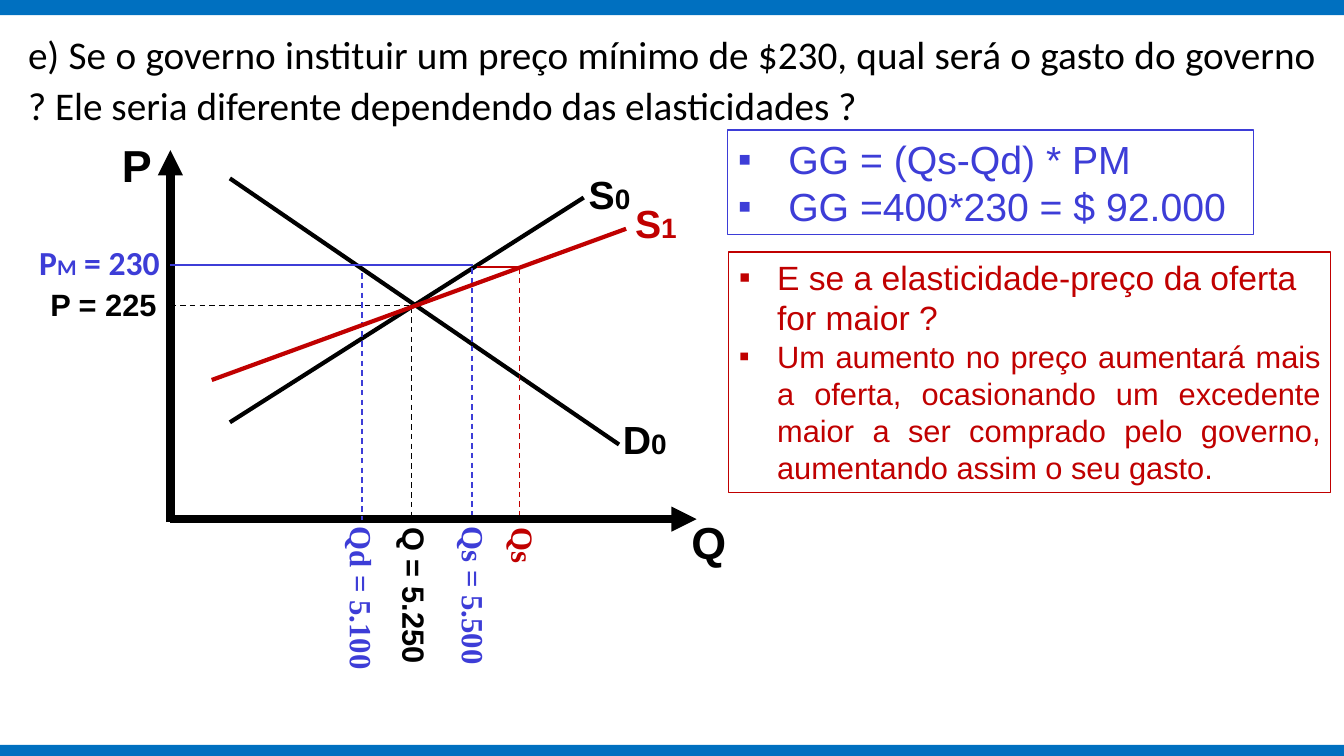
from lxml import etree
from pptx import Presentation
from pptx import util as u
from pptx.dml.color import RGBColor
from pptx.enum import dml, shapes, text
from pptx.oxml import ns

BLACK = RGBColor(0x00, 0x00, 0x00)
BAND = RGBColor(0x00, 0x70, 0xC0)
BLUE = RGBColor(0x3D, 0x3D, 0xD7)
RED = RGBColor(0xC0, 0x00, 0x00)
JUSTIFY = text.PP_ALIGN.JUSTIFY


class MarketSlide:
    """Holds the fonts and the slide, and draws each kind of element."""

    sans, body, serif = "Arial", "Calibri", "Times New Roman"

    def __init__(self, prs):
        self.s = prs.slides.add_slide(prs.slide_layouts[6])

    def band(self, top, height):
        sp = self.s.shapes.add_shape(shapes.MSO_SHAPE.RECTANGLE, 0, u.Inches(top),
                                     u.Inches(13.33), u.Inches(height))
        sp.shadow.inherit = False
        sp.fill.solid()
        sp.fill.fore_color.rgb = BAND
        sp.line.fill.background()

    def line(self, start, end, color=BLACK, width=3, dashed=False, arrow=False):
        ends = [u.Inches(v) for v in (*start, *end)]
        sp = self.s.shapes.add_connector(shapes.MSO_CONNECTOR.STRAIGHT, *ends)
        sp.line.color.rgb = color
        sp.line.width = u.Pt(width)
        if dashed:
            sp.line.dash_style = dml.MSO_LINE.DASH
        if arrow:
            ln = sp.line._get_or_add_ln()
            etree.SubElement(ln, ns.qn("a:tailEnd"), type="triangle")
        etree.SubElement(sp._element.spPr, ns.qn("a:effectLst"))

    def frame(self, left, top, width, height, border=None):
        sp = self.s.shapes.add_textbox(*[u.Inches(v) for v in (left, top, width, height)])
        sp.text_frame.word_wrap = True
        if border is not None:
            sp.line.color.rgb = border
            sp.line.width = u.Pt(0.75)
        return sp

    def format(self, r, size, font, color, bold=False):
        r.font.size = u.Pt(size)
        r.font.name = font
        r.font.color.rgb = color
        r.font.bold = bold

    def label(self, box, parts, color=BLACK, font=sans, rotation=0):
        sp = self.frame(*box)
        sp.rotation = rotation
        p = sp.text_frame.paragraphs[0]
        for words, size in parts:
            r = p.add_run()
            r.text = words
            self.format(r, size, font, color, True)

    def question(self, box, words):
        p = self.frame(*box).text_frame.paragraphs[0]
        p.text = words
        p.alignment = JUSTIFY
        p.line_spacing = 1.07
        p.space_after = u.Pt(8)
        self.format(p.runs[0], 28, self.body, BLACK)

    def bullets(self, box, color, indent, items):
        tf = self.frame(*box, border=color).text_frame
        for i, (words, size, align) in enumerate(items):
            p = tf.add_paragraph() if i else tf.paragraphs[0]
            p.text = words
            p.alignment = align
            pPr = p._p.get_or_add_pPr()
            pPr.set("marL", str(u.Inches(indent)))
            pPr.set("indent", str(-u.Inches(indent)))
            etree.SubElement(pPr, ns.qn("a:buFont"), typeface=self.sans)
            etree.SubElement(pPr, ns.qn("a:buChar"), char="▪")
            self.format(p.runs[0], size, self.sans, color)


def main():
    prs = Presentation()
    prs.slide_width, prs.slide_height = u.Inches(13.33), u.Inches(7.5)
    m = MarketSlide(prs)
    m.band(-0.03, 0.18)
    m.band(7.39, 0.13)
    m.question((0.18, 0.22, 12.97, 1.09),
               "e) Se o governo instituir um preço mínimo de $230, qual será o gasto do "
               "governo ? Ele seria diferente dependendo das elasticidades ?")

    axis_x, axis_y = 1.69, 5.15
    m.line((axis_x, 5.18), (axis_x, 1.49), width=6, arrow=True)
    m.line((axis_x, axis_y), (6.91, axis_y), width=6, arrow=True)
    m.line((2.28, 1.77), (6.14, 4.41))
    m.line((2.28, 4.19), (5.79, 1.96))
    m.line((axis_x, 3.03), (4.07, 3.03), width=1, dashed=True)
    for x, top, bottom, color in ((4.08, 3.05, axis_y, BLACK), (3.59, 2.71, 5.16, BLUE),
                                  (4.68, 2.66, 5.11, BLUE), (5.15, 2.66, 5.11, RED)):
        m.line((x, top), (x, bottom), color, 1, dashed=True)
    m.line((axis_x, 2.63), (4.69, 2.63), BLUE, 1.5)
    m.line((2.1, 3.77), (6.21, 2.27), RED)
    m.line((4.73, 2.65), (5.2, 2.65), RED, 1.5)

    m.label((1.11, 1.32, 0.68, 0.64), [("P", 32)])
    m.label((6.76, 5.06, 0.68, 0.64), [("Q", 32)])
    m.label((0.4, 2.79, 1.99, 0.47), [("P = 225", 22)])
    m.label((0.29, 2.35, 1.89, 0.5), [("P", 24), ("M", 16), (" = 230", 24)], BLUE, m.body)
    for left, top, letter, digit, color in ((5.74, 1.64, "S", "0", BLACK),
                                            (6.08, 4.07, "D", "0", BLACK),
                                            (6.2, 1.93, "S", "1", RED)):
        m.label((left, top, 1.03, 0.57), [(letter, 28), (digit, 20)], color)
    for left, top, width, words, color, font in (
            (2.63, 5.85, 1.92, "Qd = 5.100", BLUE, m.serif),
            (3.19, 5.82, 1.84, "Q = 5.250", BLACK, m.sans),
            (3.74, 5.85, 1.92, "Qs = 5.500", BLUE, m.serif),
            (4.91, 5.18, 0.56, "Qs", RED, m.serif)):
        m.label((left, top, width, 0.47), [(words, 22)], color, font, 90)

    m.bullets((7.22, 1.29, 5.21, 1.04), BLUE, 0.5,
              [("GG = (Qs-Qd) * PM", 28, None), ("GG =400*230 = $ 92.000", 28, None)])
    m.bullets((7.23, 2.5, 5.97, 2.39), RED, 0.38,
              [("E se a elasticidade-preço da oferta for maior ?", 24, None),
               ("Um aumento no preço aumentará mais a oferta, ocasionando um excedente "
                "maior a ser comprado pelo governo, aumentando assim o seu gasto.", 22, JUSTIFY)])
    prs.save("out.pptx")


if __name__ == "__main__":
    main()
